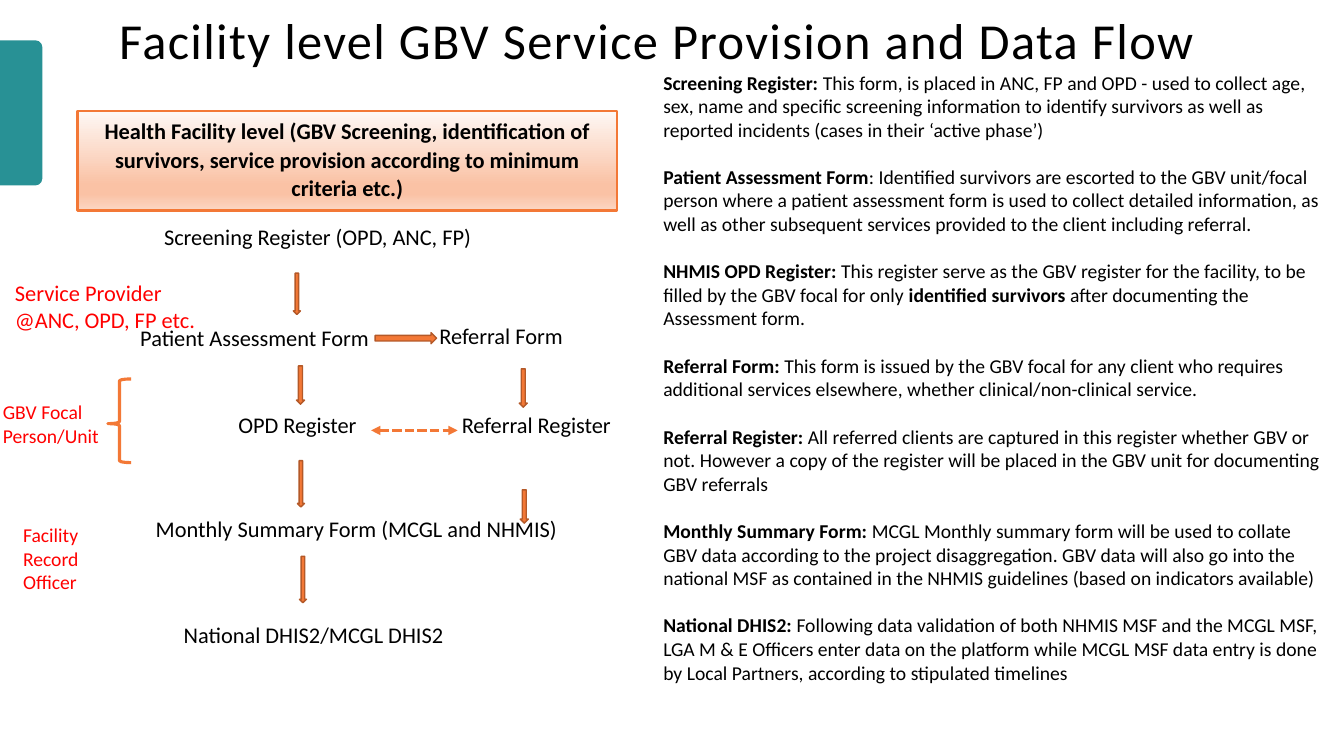
from copy import deepcopy
from pptx import Presentation
from pptx import util as u
from pptx.dml.color import RGBColor
from pptx.enum import dml, shapes, text
from pptx.oxml.xmlchemy import OxmlElement


def color(code):
    return RGBColor.from_string(code)


class Page:
    font = "Calibri"
    ink = "000000"
    red = "FF0000"
    teal = "289195"
    flame = "F37836"
    rust = "B45928"

    def __init__(self, deck):
        self.slide = deck.slides.add_slide(deck.slide_layouts[5])
        self.items = self.slide.shapes

    def style(self, para, size, code, bold=None):
        font = para.font
        font.name = self.font
        font.size = u.Pt(size)
        font.color.rgb = color(code)
        font.bold = bold

    def center(self, para):
        para.alignment = text.PP_ALIGN.CENTER
        para.line_spacing = 1.06
        para.space_after = u.Pt(8)

    def title(self, words, *area):
        box = self.items.title
        box.left, box.top, box.width, box.height = map(u.Inches, area)
        frame = box.text_frame
        frame.text = words
        frame.auto_size = text.MSO_AUTO_SIZE.NONE
        frame.vertical_anchor = text.MSO_ANCHOR.MIDDLE
        para = frame.paragraphs[0]
        self.center(para)
        self.style(para, 36, self.ink)
        para.runs[0]._r.get_or_add_rPr().set("spc", "100")

    def frame(self, *area):
        frame = self.items.add_textbox(*map(u.Inches, area)).text_frame
        frame.word_wrap = True
        return frame

    def label(self, words, *area):
        para = self.frame(*area).paragraphs[0]
        para.text = words
        self.center(para)
        self.style(para, 16, self.ink)

    def role(self, lines, size, *area):
        frame = self.frame(*area)
        frame.text = "\n".join(lines)
        for para in frame.paragraphs:
            self.style(para, size, self.red)

    def notes(self, entries, *area):
        frame = self.frame(*area)
        for index, parts in enumerate(entries):
            para = frame.add_paragraph() if index else frame.paragraphs[0]
            if index:
                para.space_before = u.Pt(17)
            self.style(para, 14, self.ink)
            for place, words in enumerate(parts):
                run = para.add_run()
                run.text = words
                run.font.bold = place % 2 == 0

    def shape(self, kind, area, fill=None, line=None, width=1, turn=0):
        item = self.items.add_shape(kind, *map(u.Inches, area))
        item.shadow.inherit = False
        item.rotation = turn
        if fill:
            item.fill.solid()
            item.fill.fore_color.rgb = color(fill)
        else:
            item.fill.background()
        if line:
            item.line.color.rgb = color(line)
            item.line.width = u.Pt(width)
        else:
            item.line.fill.background()
        return item

    def arrow(self, *area, turn=0):
        kind = shapes.MSO_SHAPE.DOWN_ARROW
        self.shape(kind, area, self.flame, self.rust, turn=turn)

    def banner(self, words, stops, *area):
        item = self.shape(shapes.MSO_SHAPE.RECTANGLE, area, line=self.flame, width=1.75)
        fill = item.fill
        fill.gradient()
        fill.gradient_angle = 270
        first = item._element.spPr.find(".//{*}gs")
        for _ in stops[2:]:
            first.addnext(deepcopy(first))
        for stop, (spot, code) in zip(fill.gradient_stops, stops):
            stop.position = spot
            stop.color.rgb = color(code)
        frame = item.text_frame
        frame.word_wrap = True
        frame.vertical_anchor = text.MSO_ANCHOR.TOP
        para = frame.paragraphs[0]
        para.text = words
        self.center(para)
        self.style(para, 16, self.ink, True)

    def link(self, *ends):
        item = self.items.add_connector(shapes.MSO_CONNECTOR.STRAIGHT, *map(u.Inches, ends))
        item.line.color.rgb = color(self.flame)
        item.line.width = u.Pt(2.25)
        item.line.dash_style = dml.MSO_LINE.SQUARE_DOT
        line = item.line._get_or_add_ln()
        for tag in ("a:headEnd", "a:tailEnd"):
            tip = OxmlElement(tag)
            tip.set("type", "triangle")
            line.append(tip)
        item._element.spPr.append(OxmlElement("a:effectLst"))

    def brace(self, *area):
        item = self.shape(shapes.MSO_SHAPE.LEFT_BRACE, area, line=self.flame, width=2.25)
        item.adjustments[0] = 0.083
        item.adjustments[1] = 0.534


LABELS = [
    ("OPD Register ", 1.1, 4.01, 3.75, 0.56),
    ("Referral Form ", 4.16, 3.13, 1.67, 0.56),
    ("Screening Register (OPD, ANC, FP)  ", 1.34, 2.15, 3.72, 0.52),
    ("National DHIS2/MCGL DHIS2", 1.34, 6.1, 3.54, 0.51),
    ("Referral Register", 4.33, 4.01, 1.98, 0.52),
    ("Monthly Summary Form (MCGL and NHMIS)", 1.38, 5.05, 4.31, 0.56),
    ("Patient Assessment Form ", 1.21, 3.15, 2.68, 0.52),
]
ARROWS = [
    (2.91, 2.71, 0.07, 0.41),
    (2.94, 3.63, 0.08, 0.38),
    (2.95, 4.57, 0.07, 0.46),
    (2.97, 5.52, 0.07, 0.46),
    (5.15, 3.66, 0.08, 0.38),
    (5.16, 4.86, 0.08, 0.33),
]
STOPS = [(0, "FEF8F5"), (0.74, "FAC2A5"), (0.83, "FAC2A5"), (1, "FBD6C3")]
ROLES = [
    (["GBV Focal", "Person/Unit"], 14, -0.07, 3.92, 1.28, 0.57),
    (["Service Provider", "@ANC, OPD, FP etc."], 16, 0.05, 2.72, 2.22, 0.64),
    (["Facility Record Officer"], 14, 0.13, 5.14, 1.28, 0.81),
]
NOTES = [
    ("Screening Register: ", "This form, is placed in ANC, FP and OPD - used to collect age, sex, name and specific screening information to identify survivors as well as reported incidents (cases in their ‘active phase’)"),
    ("Patient Assessment Form", ": Identified survivors are escorted to the GBV unit/focal person where a patient assessment form is used to collect detailed information, as well as other subsequent services provided to the client including referral."),
    ("NHMIS OPD Register: ", "This register serve as the GBV register for the facility, to be filled by the GBV focal for only ", "identified survivors", " after documenting the Assessment form."),
    ("Referral Form: ", "This form is issued by the GBV focal for any client who requires additional services elsewhere, whether clinical/non-clinical service."),
    ("Referral Register: ", "All referred clients are captured in this register whether GBV or not. However a copy of the register will be placed in the GBV unit for documenting GBV referrals"),
    ("Monthly Summary Form: ", "MCGL Monthly summary form will be used to collate GBV data according to the project disaggregation. GBV data will also go into the national MSF as contained in the NHMIS guidelines (based on indicators available)"),
    ("National DHIS2: ", "Following data validation of both NHMIS MSF and the MCGL MSF, LGA M & E Officers enter data on the platform while MCGL MSF data entry is done by Local Partners, according to stipulated timelines"),
]


def main():
    deck = Presentation()
    deck.slide_width, deck.slide_height = u.Inches(13.33), u.Inches(7.5)
    page = Page(deck)
    page.shape(shapes.MSO_SHAPE.ROUND_2_SAME_RECTANGLE, (-0.51, 0.91, 1.44, 0.42), page.teal, turn=90)
    page.title("Facility level GBV Service Provision and Data Flow", 0.77, -0.35, 11.5, 1.45)
    page.banner("Health Facility level (GBV Screening, identification of survivors, service provision according to minimum criteria etc.)", STOPS, 0.77, 1.1, 5.35, 0.99)
    for label in LABELS:
        page.label(*label)
    for arrow in ARROWS:
        page.arrow(*arrow)
    page.arrow(3.97, 3.05, 0.11, 0.61, turn=270)
    page.link(3.68, 4.27, 4.54, 4.27)
    page.notes(NOTES, 6.48, 0.65, 6.75, 6.3)
    page.brace(1.07, 3.76, 0.23, 0.83)
    for role in ROLES:
        page.role(*role)
    deck.save("out.pptx")


if __name__ == "__main__":
    main()
